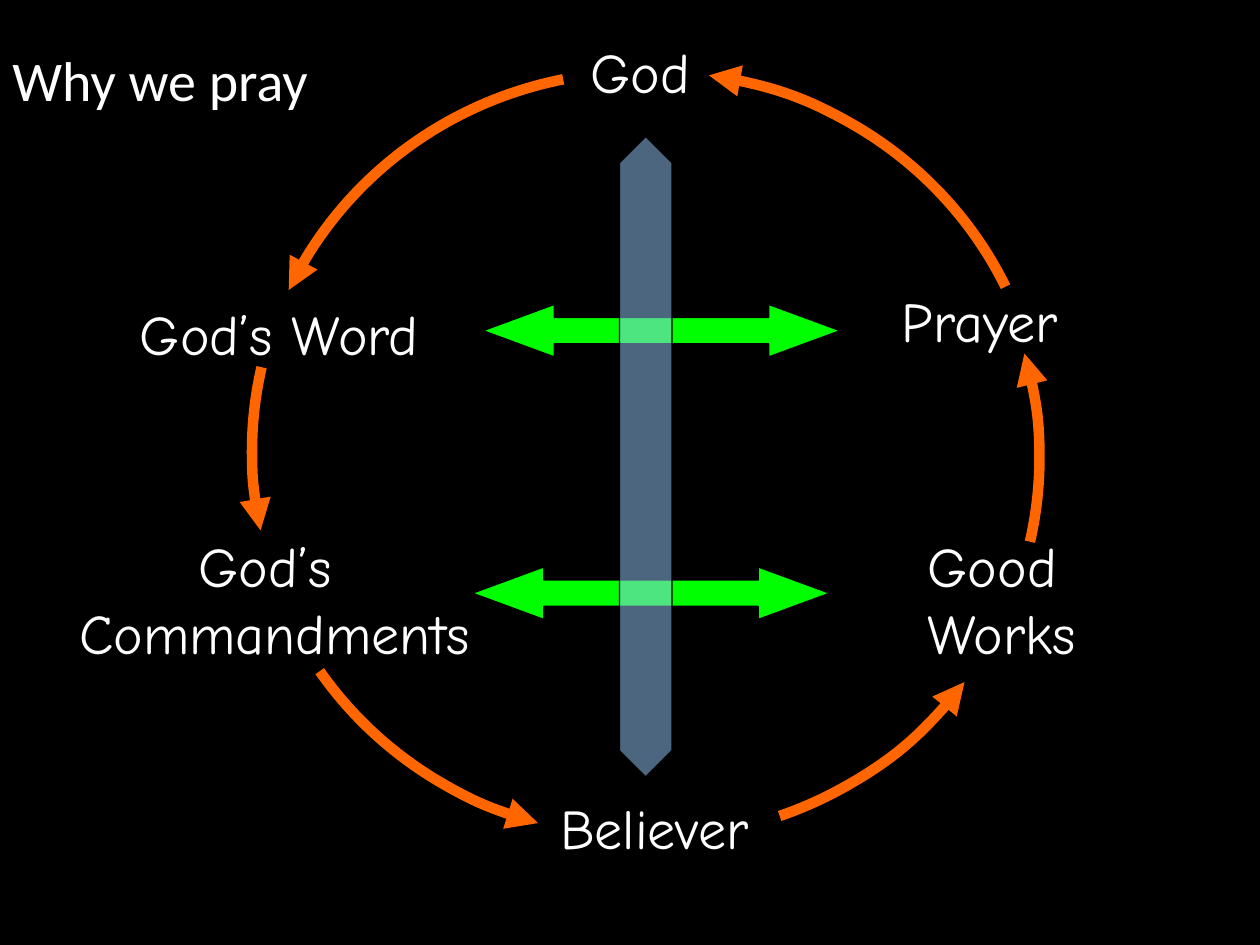
from pptx import Presentation
from pptx.dml.color import RGBColor
from pptx.enum.shapes import MSO_SHAPE
from pptx.enum.text import MSO_ANCHOR, MSO_AUTO_SIZE, PP_ALIGN
from pptx.oxml.ns import qn
from pptx.util import Pt
from lxml.etree import SubElement

BLACK = RGBColor(0x00, 0x00, 0x00)
WHITE = RGBColor(0xFF, 0xFF, 0xFF)
GREEN = RGBColor(0x00, 0xFF, 0x00)
BLUE = RGBColor(0x99, 0xCC, 0xFF)
ORANGE = RGBColor(0xFF, 0x66, 0x00)

TITLE_FRAME = {"word_wrap": True, "vertical_anchor": MSO_ANCHOR.MIDDLE}
LABEL_FRAME = {
    "word_wrap": False,
    "auto_size": MSO_AUTO_SIZE.SHAPE_TO_FIT_TEXT,
    "vertical_anchor": MSO_ANCHOR.MIDDLE,
}
TITLE_FONT = {"name": "Calibri", "size": Pt(32)}
LABEL_FONT = {"name": "Comic Neue", "size": Pt(32)}

LABELS = [
    ("God’s Word", 30, 150, 187, 45),
    ("God", 294, 0, 72, 45),
    ("Prayer", 468, 142.5, 112, 45),
    ("Good \nWorks", 480, 282, 113, 84),
    ("Believer", 270, 432, 136, 45),
    ("God’s \vCommandments", 0, 282, 242, 84),
]
ARROWS = [
    (MSO_SHAPE.LEFT_RIGHT_ARROW, 240, 156, 204, 30, 1.36, GREEN, 100),
    (MSO_SHAPE.LEFT_RIGHT_ARROW, 234, 306, 204, 30, 1.36, GREEN, 100),
    (MSO_SHAPE.UP_DOWN_ARROW, 318, 60, 30, 366, 2.44, BLUE, 50),
]
ARCS = [
    (108, 23, 204.6, 258.26),
    (108, 23, 168.2, 192.48),
    (108, 26.5, 105.64, 146.29),
    (114, 27, 35.55, 70.23),
    (114, 27, 344.36, 12.45),
    (116.5, 23, 278.12, 334.86),
]
ARC_WIDTH, ARC_HEIGHT = 444, 433.5
ARC_UNITS_PER_DEGREE = 0.6


def apply_format(target, values):
    for name, value in values.items():
        setattr(target, name, value)


def add_text(slide, box, text, frame_format, font_format, alignment):
    frame = slide.shapes.add_textbox(*map(Pt, box)).text_frame
    apply_format(frame, frame_format)
    frame.text = text
    for paragraph in frame.paragraphs:
        paragraph.alignment = alignment
        for run in paragraph.runs:
            apply_format(run.font, font_format)
            run.font.color.rgb = WHITE


def add_outlined(slide, kind, box, color, width):
    outlined = slide.shapes.add_shape(kind, *map(Pt, box))
    outlined.shadow.inherit = False
    outlined.line.color.rgb = color
    outlined.line.width = Pt(width)
    return outlined


def add_title(slide, box):
    add_text(slide, box, "Why we pray", TITLE_FRAME, TITLE_FONT, PP_ALIGN.LEFT)


def add_labels(slide, left, top):
    for text, x, y, width, height in LABELS:
        box = left + x, top + y, width, height
        add_text(slide, box, text, LABEL_FRAME, LABEL_FONT, PP_ALIGN.CENTER)


def add_cross_arrows(slide, left, top):
    for kind, x, y, width, height, head, color, opacity in ARROWS:
        arrow = add_outlined(slide, kind, (left + x, top + y, width, height), BLACK, 0.75)
        arrow.adjustments[0] = 0.5
        arrow.adjustments[1] = head
        arrow.fill.solid()
        arrow.fill.fore_color.rgb = color
        if opacity < 100:
            fill_color = arrow.fill._xPr.find(qn("a:solidFill"))[0]
            SubElement(fill_color, qn("a:alpha"), val=str(opacity * 1000))


def add_prayer_cycle(slide, left, top):
    for x, y, start, end in ARCS:
        box = left + x, top + y, ARC_WIDTH, ARC_HEIGHT
        arc = add_outlined(slide, MSO_SHAPE.ARC, box, ORANGE, 6)
        arc.fill.background()
        for index, degrees in enumerate((start, end)):
            arc.adjustments[index] = degrees * ARC_UNITS_PER_DEGREE
        SubElement(arc.line._get_or_add_ln(), qn("a:headEnd"), type="triangle")


def main():
    presentation = Presentation()
    apply_format(presentation, {"slide_width": Pt(720), "slide_height": Pt(540)})
    slide = presentation.slides.add_slide(presentation.slide_layouts[6])
    slide.background.fill.solid()
    slide.background.fill.fore_color.rgb = BLACK
    add_title(slide, (0, 0, 720, 90))
    for add_region in (add_labels, add_cross_arrows, add_prayer_cycle):
        add_region(slide, 36, 18)
    presentation.save("out.pptx")


if __name__ == "__main__":
    main()
